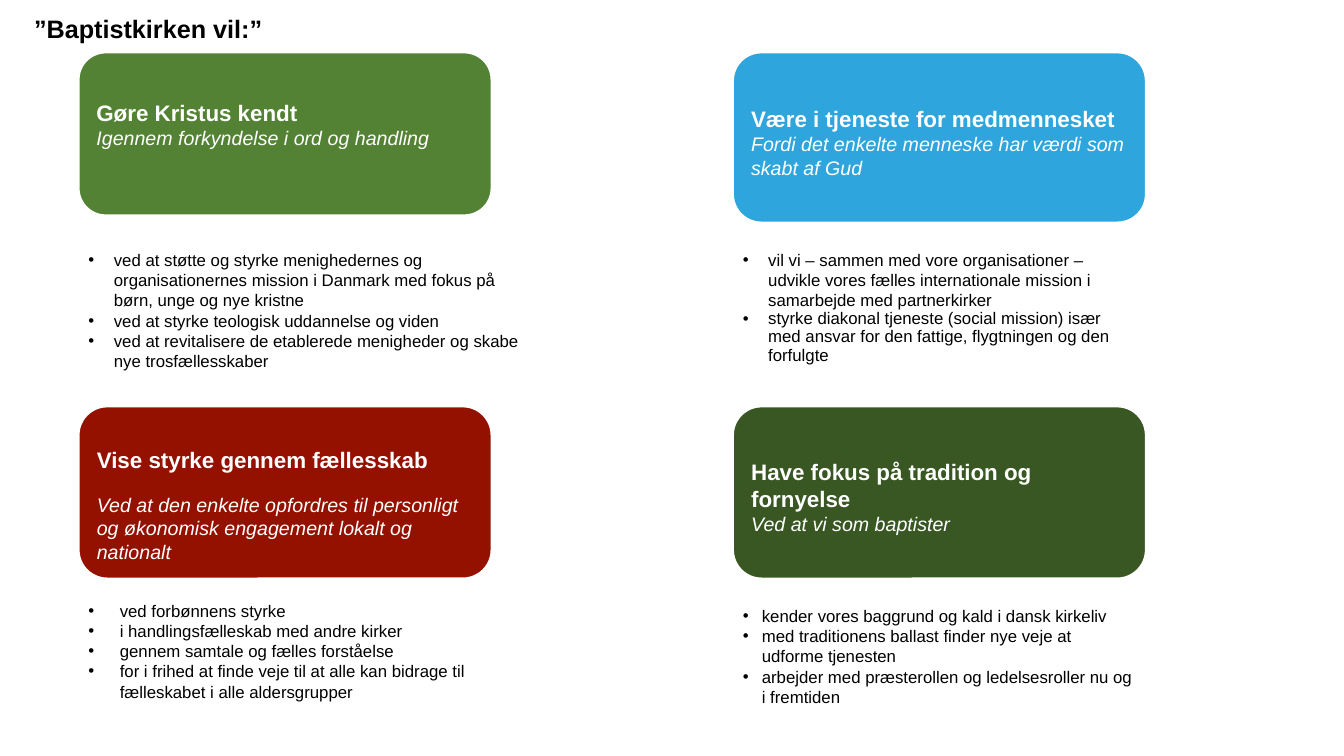
from pptx import Presentation, oxml
from pptx.dml.color import RGBColor
from pptx.enum import shapes, text
from pptx.util import Cm, Pt

WHITE = RGBColor(0xFF, 0xFF, 0xFF)
BLACK = RGBColor(0, 0, 0)
GREEN = RGBColor(0x54, 0x82, 0x35)
BLUE = RGBColor(0x2E, 0xA5, 0xDC)
RED = RGBColor(0x94, 0x11, 0x00)
DARK_GREEN = RGBColor(0x38, 0x57, 0x23)
FONT = "Arial"

HEADING = "”Baptistkirken vil:”"
LEFT, RIGHT = 1.98, 18.47
UPPER, LOWER = 1.32, 10.24
CARD_WIDTH = 10.41

CARDS = [
    dict(left=LEFT, top=UPPER, height=4.11, inset=0.97, gap=0, fill=GREEN,
         title="Gøre Kristus kendt",
         subtitle="Igennem forkyndelse i ord og handling"),
    dict(left=RIGHT, top=UPPER, height=4.29, inset=1.12, gap=0, fill=BLUE,
         title="Være i tjeneste for medmennesket",
         subtitle="Fordi det enkelte menneske har værdi som skabt af Gud"),
    dict(left=LEFT, top=LOWER, height=4.34, inset=0.79, gap=14, fill=RED,
         title="Vise styrke gennem fællesskab",
         subtitle="Ved at den enkelte opfordres til personligt og økonomisk "
                  "engagement lokalt og nationalt"),
    dict(left=RIGHT, top=LOWER, height=4.34, inset=1.1, gap=0, fill=DARK_GREEN,
         title="Have fokus på tradition og fornyelse",
         subtitle="Ved at vi som baptister"),
]

LISTS = [
    dict(left=LEFT, top=6.17, width=11.66, height=3.33, indent=0.64, items=[
        ("ved at støtte og styrke menighedernes og organisationernes mission i "
         "Danmark med fokus på børn, unge og nye kristne", 1),
        ("ved at styrke teologisk uddannelse og viden", 1),
        ("ved at revitalisere de etablerede menigheder og skabe nye "
         "trosfællesskaber", 1)]),
    dict(left=RIGHT, top=6.17, width=CARD_WIDTH, height=3.66, indent=0.64, items=[
        ("vil vi – sammen med vore organisationer – udvikle vores fælles "
         "internationale mission i samarbejde med partnerkirker", 1),
        ("styrke diakonal tjeneste (social mission) især med ansvar for den "
         "fattige, flygtningen og den forfulgte", 0.9)]),
    dict(left=LEFT, top=15.01, width=11.02, height=2.82, indent=0.79, items=[
        ("ved forbønnens styrke", 1),
        ("i handlingsfælleskab med andre kirker", 1),
        ("gennem samtale og fælles forståelse", 1),
        ("for i frihed at finde veje til at alle kan bidrage til fælleskabet "
         "i alle aldersgrupper", 1)]),
    dict(left=RIGHT, top=15.14, width=CARD_WIDTH, height=2.82, indent=0.48, items=[
        ("kender vores baggrund og kald i dansk kirkeliv", 1),
        ("med traditionens ballast finder nye veje at udforme tjenesten", 1),
        ("arbejder med præsterollen og ledelsesroller nu og i fremtiden", 1)]),
]


def add_span(para, words, size, color, bold=False, italic=False):
    span = para.add_run()
    span.text = words
    font = span.font
    font.name, font.size = FONT, Pt(size)
    font.bold, font.italic = bold, italic
    font.color.rgb = color


def next_para(frame, index):
    return frame.add_paragraph() if index else frame.paragraphs[0]


def add_bullet(para, indent):
    props = para._p.get_or_add_pPr()
    props.set("marL", str(Cm(indent)))
    props.set("indent", str(-Cm(indent)))
    for tag, name, value in (("buFont", "typeface", FONT), ("buChar", "char", "•")):
        bullet = oxml.parse_xml(
            f'<a:{tag} xmlns:a="http://schemas.openxmlformats.org/drawingml/2006/main" '
            f'{name}="{value}"/>')
        props.append(bullet)


def add_card(page, card):
    box = page.shapes.add_shape(
        shapes.MSO_SHAPE.ROUNDED_RECTANGLE, Cm(card["left"]), Cm(card["top"]),
        Cm(CARD_WIDTH), Cm(card["height"]))
    box.shadow.inherit = False
    box.fill.solid()
    box.fill.fore_color.rgb = card["fill"]
    box.line.color.rgb = WHITE
    box.line.width = Pt(1.5)
    frame = box.text_frame
    frame.word_wrap = True
    frame.vertical_anchor = text.MSO_ANCHOR.TOP
    frame.margin_top = Cm(card["inset"])
    title = frame.paragraphs[0]
    subtitle = frame.add_paragraph()
    title.alignment = subtitle.alignment = text.PP_ALIGN.LEFT
    subtitle.space_before = Pt(card["gap"])
    add_span(title, card["title"], 16, WHITE, bold=True)
    add_span(subtitle, card["subtitle"], 14, WHITE, italic=True)


def add_list(page, entry):
    box = page.shapes.add_textbox(*(Cm(entry[key]) for key in ("left", "top", "width", "height")))
    frame = box.text_frame
    frame.word_wrap = True
    for index, (words, spacing) in enumerate(entry["items"]):
        para = next_para(frame, index)
        add_bullet(para, entry["indent"])
        para.line_spacing = spacing
        add_span(para, words, 12, BLACK)


def main():
    deck = Presentation()
    deck.slide_width, deck.slide_height = Cm(33.87), Cm(19.05)
    page = deck.slides.add_slide(deck.slide_layouts[6])
    for entry in LISTS:
        add_list(page, entry)
    for card in CARDS:
        add_card(page, card)
    heading = page.shapes.add_textbox(Cm(0.61), Cm(0.2), Cm(6.32), Cm(1.8))
    heading.text_frame.word_wrap = False
    add_span(heading.text_frame.paragraphs[0], HEADING, 18, BLACK, bold=True)
    deck.save("out.pptx")


if __name__ == "__main__":
    main()
